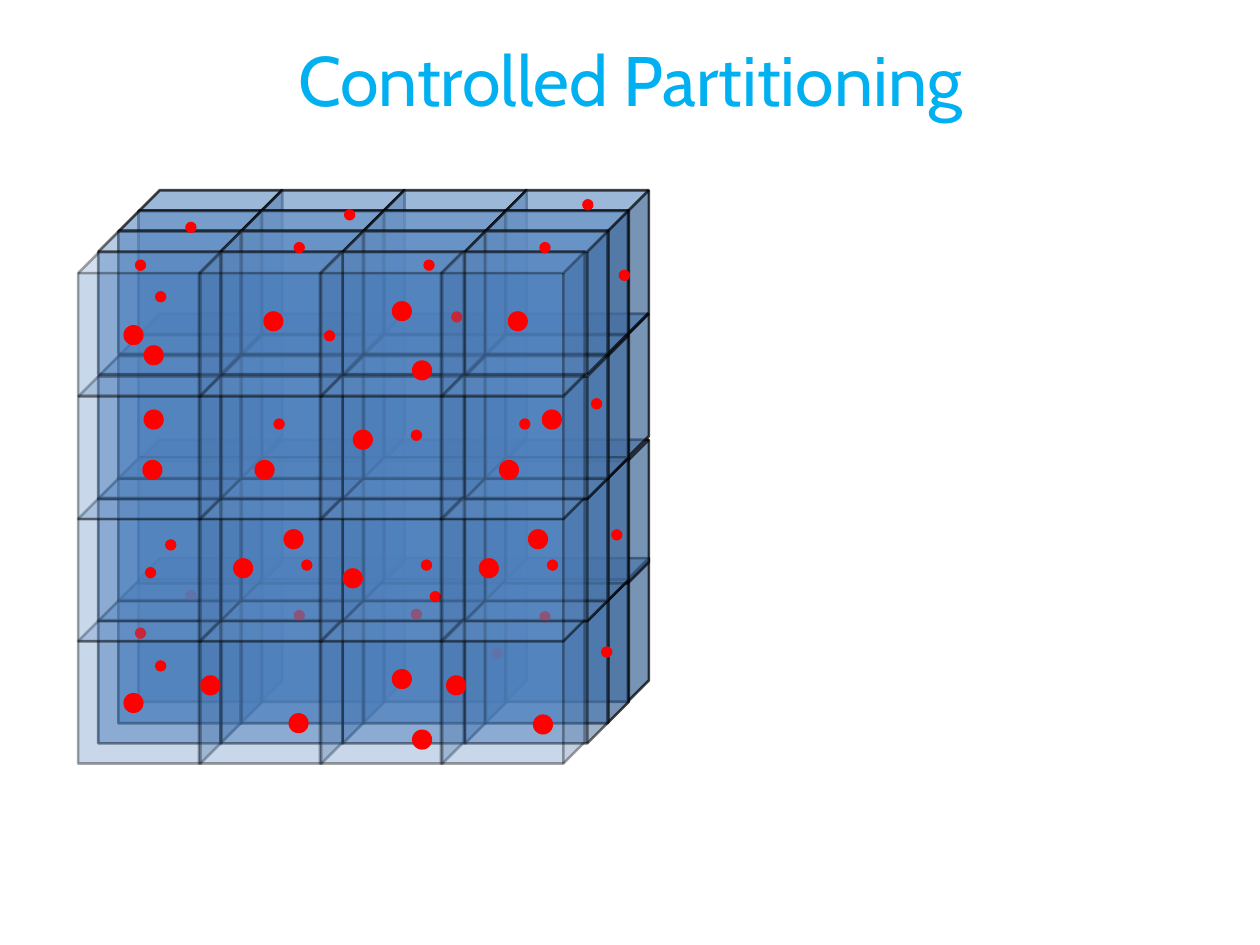
import dataclasses

import lxml.etree
import pptx
import pptx.dml.color
import pptx.enum.shapes
import pptx.enum.text
import pptx.oxml.ns
import pptx.util

PX = 9144
CUBE = 114
CUBE_DEPTH = 0.148
BIG_DOT = 16
SMALL_DOT = 9
BOTTOM_ROW = 3
UPPER_ROWS = (2, 1, 0)


@dataclasses.dataclass(frozen=True)
class Theme:
    font: str = "Cabin"
    title_size: int = 40
    title: str = "00B0F0"
    cube: str = "4F81BD"
    edge: str = "000000"
    edge_width: float = 1.5
    dot: str = "FF0000"


@dataclasses.dataclass(frozen=True)
class Layer:
    left: int
    pitch: int
    tops: tuple
    fill_alpha: int
    edge_alpha: int


@dataclasses.dataclass(frozen=True)
class Section:
    columns: tuple
    bottom_big: tuple
    bottom_small: tuple
    upper_big: tuple
    upper_small: tuple


THEME = Theme()

LAYERS = (
    Layer(48, 97, (1, 99, 199, 293), 70, 73),
    Layer(32, 97, (17, 116, 213, 310), 70, 73),
    Layer(16, 97, (33, 132, 229, 326), 50, 54),
    Layer(0, 96, (50, 148, 245, 342), 31, 34),
)

SECTIONS = (
    Section(
        columns=(0, 1, 2),
        bottom_big=((36, 400), (97, 386), (167, 416), (249, 381), (265, 429)),
        bottom_small=((171, 334), (85, 318), (61, 374), (45, 348),
                      (328, 364), (264, 333)),
        upper_big=((36, 108), (52, 124), (51, 215), (52, 175), (123, 293),
                   (210, 301), (163, 270), (140, 215), (218, 191),
                   (147, 97), (249, 89), (265, 136)),
        upper_small=((177, 294), (272, 294), (264, 191), (155, 182),
                     (53, 300), (69, 278), (171, 42), (85, 26), (61, 81),
                     (45, 56), (296, 97), (274, 56)),
    ),
    Section(
        columns=(3,),
        bottom_big=((292, 386), (361, 417)),
        bottom_small=((366, 335), (279, 319), (415, 363)),
        upper_big=((318, 293), (357, 270), (334, 215), (368, 175), (341, 97)),
        upper_small=((372, 294), (423, 270), (407, 166), (350, 182),
                     (366, 42), (211, 16), (429, 64), (195, 112), (400, 8)),
    ),
)


def px(*values):
    return [pptx.util.Emu(v * PX) for v in values]


def paint(fill, color, alpha=100):
    fill.solid()
    fill.fore_color.rgb = pptx.dml.color.RGBColor.from_string(color)
    if alpha < 100:
        clr = fill._xPr.find(".//" + pptx.oxml.ns.qn("a:srgbClr"))
        tag = pptx.oxml.ns.qn("a:alpha")
        lxml.etree.SubElement(clr, tag, val=str(alpha * 1000))


def add_cube(shapes, x, y, layer):
    kind = pptx.enum.shapes.MSO_SHAPE.CUBE
    sp = shapes.add_shape(kind, *px(x, y, CUBE, CUBE))
    sp.adjustments[0] = CUBE_DEPTH
    sp.shadow.inherit = False
    paint(sp.fill, THEME.cube, layer.fill_alpha)
    sp.line.width = pptx.util.Pt(THEME.edge_width)
    paint(sp.line.fill, THEME.edge, layer.edge_alpha)


def add_dots(shapes, left, top, places, size):
    kind = pptx.enum.shapes.MSO_SHAPE.OVAL
    for x, y in places:
        sp = shapes.add_shape(kind, *px(left + x, top + y, size, size))
        sp.shadow.inherit = False
        paint(sp.fill, THEME.dot)
        sp.line.fill.background()


def add_cubes(shapes, left, top, rows, layers, columns):
    for row in rows:
        for layer in layers:
            for column in columns:
                x = left + layer.left + column * layer.pitch
                add_cube(shapes, x, top + layer.tops[row], layer)


def add_section(shapes, left, top, section):
    columns = section.columns
    add_cubes(shapes, left, top, (BOTTOM_ROW,), LAYERS, columns)
    add_dots(shapes, left, top, section.bottom_big, BIG_DOT)
    add_dots(shapes, left, top, section.bottom_small, SMALL_DOT)
    add_cubes(shapes, left, top, UPPER_ROWS, LAYERS[:1], columns)
    add_cubes(shapes, left, top, UPPER_ROWS, LAYERS[1:], columns)
    add_dots(shapes, left, top, section.upper_big, BIG_DOT)
    add_dots(shapes, left, top, section.upper_small, SMALL_DOT)


def add_partitioned_block(s, left, top):
    group = s.shapes.add_group_shape()
    for section in SECTIONS:
        add_section(group.shapes, left, top, section)


def add_title(s, text, left, top, width, height):
    sp = s.shapes.title
    sp.left, sp.top, sp.width, sp.height = px(left, top, width, height)
    tf = sp.text_frame
    tf.text = text
    tf.vertical_anchor = pptx.enum.text.MSO_ANCHOR.MIDDLE
    p = tf.paragraphs[0]
    p.alignment = pptx.enum.text.PP_ALIGN.CENTER
    font = p.runs[0].font
    font.name = THEME.font
    font.size = pptx.util.Pt(THEME.title_size)
    font.color.rgb = pptx.dml.color.RGBColor.from_string(THEME.title)


def main():
    prs = pptx.Presentation()
    prs.slide_width, prs.slide_height = px(1000, 750)
    s = prs.slides.add_slide(prs.slide_layouts[5])
    add_title(s, "Controlled Partitioning", 0, 0, 1000, 125)
    add_partitioned_block(s, 62, 150)
    prs.save("out.pptx")


if __name__ == "__main__":
    main()
